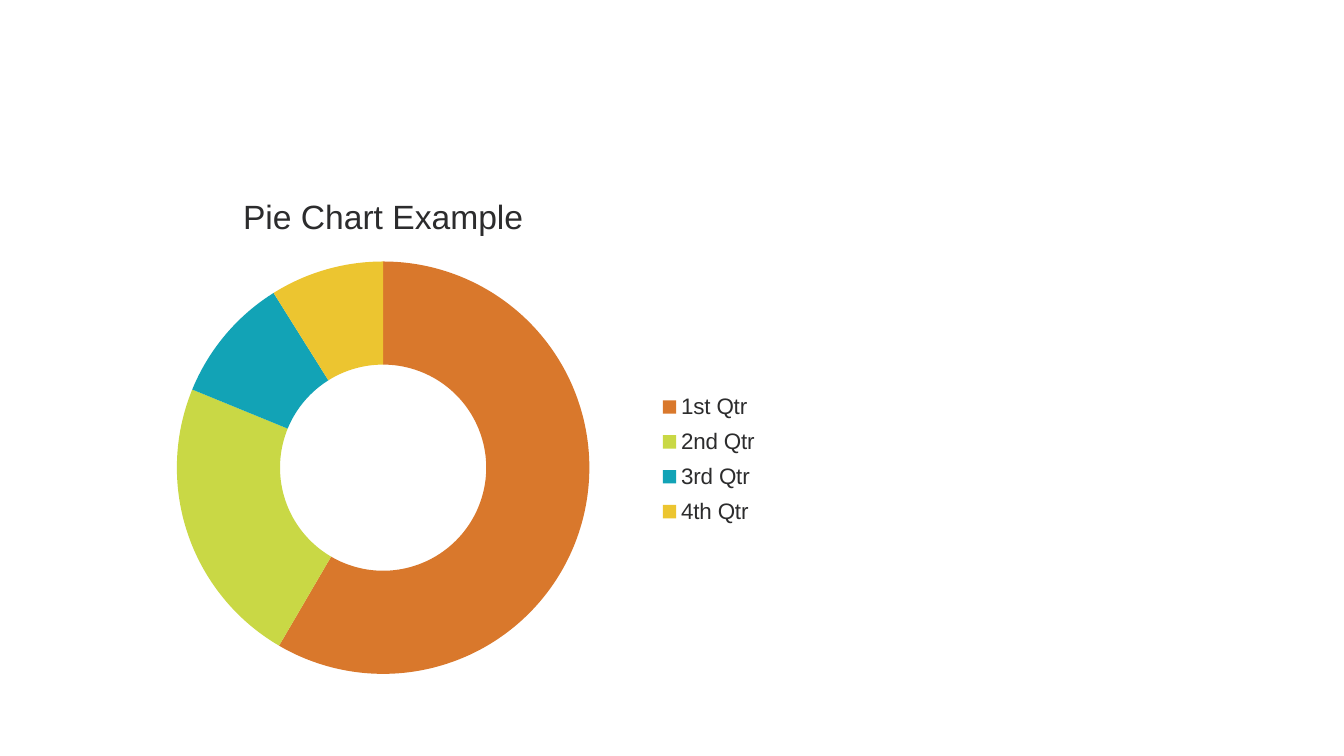
from lxml.etree import SubElement
from pptx import Presentation
from pptx.chart.data import CategoryChartData
from pptx.dml.color import RGBColor
from pptx.enum.chart import XL_CHART_TYPE, XL_LEGEND_POSITION
from pptx.oxml.ns import qn
from pptx.util import Inches, Pt


def paint(code):
    return RGBColor.from_string(code)


class Deck:
    FONT = "Arial"
    INK = "2C2C2D"
    GREY = "59595B"

    def __init__(self):
        self.prs = Presentation()
        self.prs.slide_width = Inches(13.33)
        self.prs.slide_height = Inches(7.5)
        self.slide = self.prs.slides.add_slide(self.prs.slide_layouts[6])

    def style(self, font, size, color):
        font.name = self.FONT
        font.size = Pt(size)
        font.bold = False
        font.color.rgb = paint(color)

    def place(self, part, index, inner=False, **box):
        """Set a chart part's layout, in fractions of the chart's size."""
        for old in part.findall(qn("c:layout")):
            part.remove(old)
        layout = part.makeelement(qn("c:layout"))
        part.insert(index, layout)
        manual = SubElement(layout, qn("c:manualLayout"))
        if inner:
            SubElement(manual, qn("c:layoutTarget"), val="inner")
        for side in "xy":
            SubElement(manual, qn(f"c:{side}Mode"), val="edge")
        for key, value in box.items():
            SubElement(manual, qn(f"c:{key}"), val=str(value))

    def ring(self, title, series, shares, colors, box):
        data = CategoryChartData()
        data.categories = list(shares)
        data.add_series(series, list(shares.values()))
        frame = self.slide.shapes.add_chart(
            XL_CHART_TYPE.DOUGHNUT, *map(Inches, box), data)
        chart = frame.chart
        self.style(chart.font, 10, self.GREY)

        chart.has_title = True
        head = chart.chart_title.text_frame
        head.text = title
        self.style(head.paragraphs[0].font, 24, self.INK)

        chart.has_legend = True
        legend = chart.legend
        legend.position = XL_LEGEND_POSITION.RIGHT
        legend.include_in_layout = False
        self.style(legend.font, 16, self.INK)

        plot = chart.plots[0]
        plot.vary_by_categories = True
        for index, color in enumerate(colors):
            fill = plot.series[0].points[index].format.fill
            fill.solid()
            fill.fore_color.rgb = paint(color)

        root = chart.element
        root.find(f".//{qn('c:holeSize')}").set("val", "70")
        self.place(root.find(f".//{qn('c:plotArea')}"), 0, inner=True,
                   x=0.23, y=0.16, w=0.54, h=0.74)
        self.place(root.find(f".//{qn('c:legend')}"), 1,
                   x=0.85, y=0.38, w=0.15, h=0.27)


def main():
    deck = Deck()
    deck.ring(
        "Pie Chart Example", "Series 1",
        {"1st Qtr": 59, "2nd Qtr": 23, "3rd Qtr": 10, "4th Qtr": 9},
        ["D9782C", "C9D845", "12A3B6", "ECC530"],
        (0, 1.71, 7.6, 5.53))
    deck.prs.save("out.pptx")


if __name__ == "__main__":
    main()
